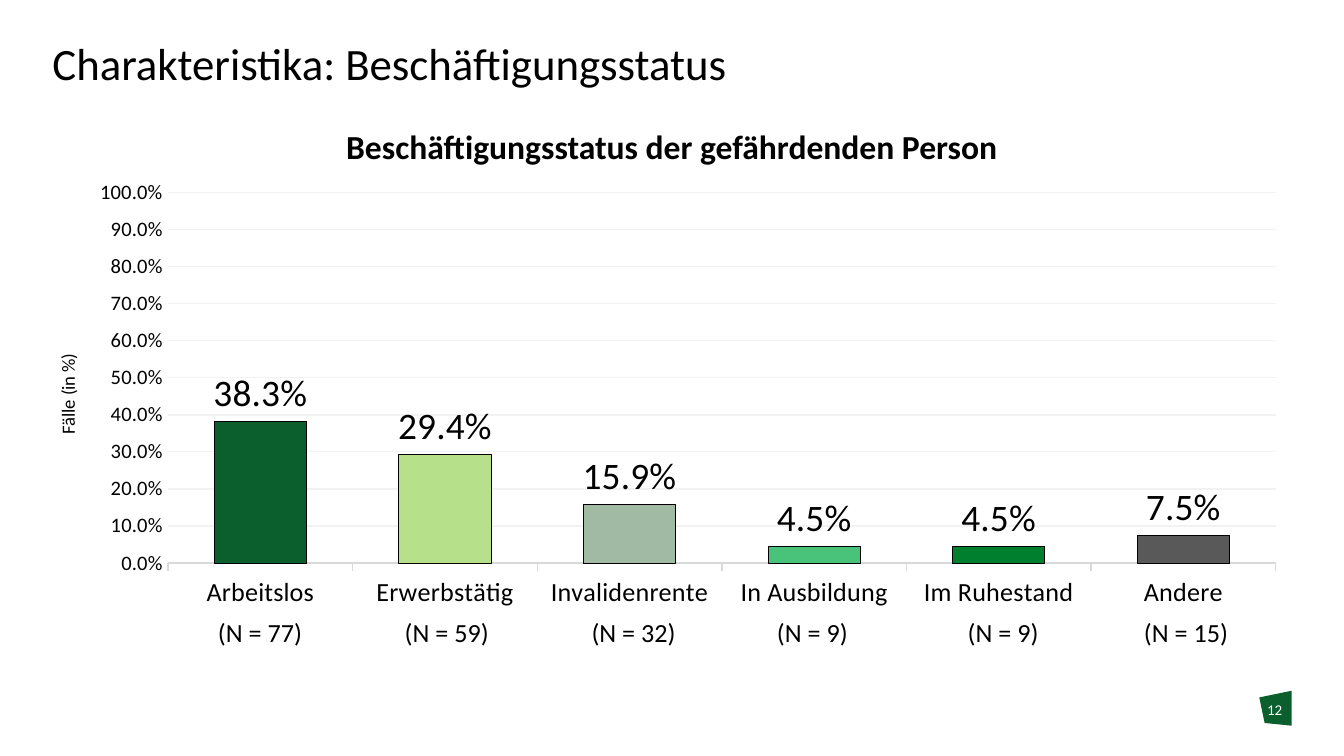
from dataclasses import dataclass

from lxml import etree
from pptx import Presentation
from pptx.chart.data import CategoryChartData
from pptx.dml.color import RGBColor
from pptx.enum.chart import XL_CHART_TYPE, XL_LABEL_POSITION, XL_TICK_MARK
from pptx.enum.shapes import MSO_SHAPE
from pptx.enum.text import MSO_ANCHOR, PP_ALIGN
from pptx.oxml.ns import qn
from pptx.util import Pt

COLUMN = XL_CHART_TYPE.COLUMN_CLUSTERED
OUTSIDE_END = XL_LABEL_POSITION.OUTSIDE_END
TICK_OUT, TICK_NONE = XL_TICK_MARK.OUTSIDE, XL_TICK_MARK.NONE
RECTANGLE = MSO_SHAPE.RECTANGLE
TOP, MIDDLE, BOTTOM = MSO_ANCHOR.TOP, MSO_ANCHOR.MIDDLE, MSO_ANCHOR.BOTTOM
LEFT, CENTER = PP_ALIGN.LEFT, PP_ALIGN.CENTER

PX = 4572
FONT = "Calibri"
PERCENT = "0.0%"
COLORS = {
    "black": "000000",
    "white": "FFFFFF",
    "dark_green": "0A5F2D",
    "lime": "B6E089",
    "sage": "A0BAA3",
    "mint": "4AC37A",
    "green": "00802F",
    "gray": "595959",
    "axis": "D9D9D9",
    "grid": "F2F2F2",
}


@dataclass
class Box:
    x: int
    y: int
    w: int
    h: int

    def emu(self) -> tuple:
        return self.x * PX, self.y * PX, self.w * PX, self.h * PX


@dataclass
class Status:
    name: str
    share: float
    count: int
    color: str
    label_x: int


STATUSES = [
    Status("Arbeitslos", 0.383, 77, "dark_green", 234),
    Status("Erwerbstätig", 0.294, 59, "lime", 512),
    Status("Invalidenrente", 0.159, 32, "sage", 790),
    Status("In Ausbildung", 0.045, 9, "mint", 1056),
    Status("Im Ruhestand", 0.045, 9, "green", 1340),
    Status("Andere", 0.075, 15, "gray", 1612),
]


def rgb(name: str) -> RGBColor:
    return RGBColor.from_string(COLORS[name])


def style_font(font, size: int, color: str = "black", bold: bool = False) -> None:
    font.name = FONT
    font.size = Pt(size)
    font.bold = bold
    font.color.rgb = rgb(color)


def style_line(line, color: str, width: float) -> None:
    line.color.rgb = rgb(color)
    line.width = Pt(width)


def fill_text(sp, text: str, size: int, color: str = "black", bold: bool = False,
              align=CENTER, anchor=TOP, inset: bool = True):
    tf = sp.text_frame
    tf.word_wrap = True
    tf.vertical_anchor = anchor
    if not inset:
        tf.margin_left = tf.margin_right = tf.margin_top = tf.margin_bottom = 0
    p = tf.paragraphs[0]
    p.alignment = align
    r = p.add_run()
    r.text = text
    style_font(r.font, size, color, bold)
    return p


def add_text(s, box: Box, text: str, size: int, **options):
    return fill_text(s.shapes.add_textbox(*box.emu()), text, size, **options)


def add_heading(s, box: Box, text: str) -> None:
    sp = s.shapes.add_shape(RECTANGLE, *box.emu())
    sp.shadow.inherit = False
    sp.fill.solid()
    sp.fill.fore_color.rgb = rgb("white")
    sp.line.fill.background()
    fill_text(sp, text, 18, bold=True, anchor=MIDDLE)


def add_page_mark(s, number: str) -> None:
    builder = s.shapes.build_freeform(1874, 1038, scale=PX)
    builder.add_line_segments([(1922, 1028), (1922, 1080), (1882, 1076)], close=True)
    sp = builder.convert_to_shape()
    sp.shadow.inherit = False
    sp.fill.solid()
    sp.fill.fore_color.rgb = rgb("dark_green")
    sp.line.fill.background()
    add_text(s, Box(1874, 1042, 46, 60), number, 8, color="white", inset=False)


def place_plot(chart, x: float, y: float, w: float, h: float) -> None:
    plot_area = chart.plots[0]._element.getparent()
    for old in plot_area.findall(qn("c:layout")):
        plot_area.remove(old)
    layout = etree.Element(qn("c:layout"))
    manual = etree.SubElement(layout, qn("c:manualLayout"))
    values = {"layoutTarget": "inner", "xMode": "edge", "yMode": "edge",
              "x": x, "y": y, "w": w, "h": h}
    for tag, value in values.items():
        etree.SubElement(manual, qn(f"c:{tag}")).set("val", str(value))
    plot_area.insert(0, layout)


def add_status_chart(s, box: Box, statuses: list[Status]) -> None:
    data = CategoryChartData(number_format=PERCENT)
    data.categories = [status.name for status in statuses]
    data.add_series("Series 1", [status.share for status in statuses])
    chart = s.shapes.add_chart(COLUMN, *box.emu(), data).chart
    chart.has_legend = False
    chart.has_title = False
    style_font(chart.font, 10)
    place_plot(chart, 0.093, 0.059, 0.89, 0.7)

    cat = chart.category_axis
    cat.major_tick_mark = TICK_OUT
    style_font(cat.tick_labels.font, 14)
    style_line(cat.format.line, "axis", 0.75)

    val = chart.value_axis
    val.minimum_scale, val.maximum_scale, val.major_unit = 0, 1, 0.1
    val.major_tick_mark = TICK_NONE
    val.format.line.fill.background()
    style_line(val.major_gridlines.format.line, "grid", 0.75)
    style_font(val.tick_labels.font, 11)
    val.tick_labels.number_format = PERCENT
    val.tick_labels.number_format_is_linked = False
    r = val.axis_title.text_frame.paragraphs[0].add_run()
    r.text = "Fälle (in %)"
    style_font(r.font, 10)

    plot = chart.plots[0]
    plot.gap_width = 100
    plot.vary_by_categories = False
    series = plot.series[0]
    series.format.fill.solid()
    series.format.fill.fore_color.rgb = rgb("dark_green")
    style_line(series.format.line, "black", 0.5)
    for i, status in enumerate(statuses):
        point = series.points[i].format
        point.fill.solid()
        point.fill.fore_color.rgb = rgb(status.color)
        style_line(point.line, "black", 0.5)

    labels = series.data_labels
    labels.show_value = True
    labels.position = OUTSIDE_END
    labels.number_format = PERCENT
    labels.number_format_is_linked = False
    style_font(labels.font, 20)


def main() -> None:
    prs = Presentation()
    prs.slide_width, prs.slide_height = 2000 * PX, 1125 * PX
    s = prs.slides.add_slide(prs.slide_layouts[6])

    add_page_mark(s, "12")
    title = add_text(s, Box(78, 0, 1844, 134), "Charakteristika: Beschäftigungsstatus", 24,
                     align=LEFT, anchor=BOTTOM, inset=False)
    title.line_spacing = 0.9
    add_status_chart(s, Box(78, 240, 1852, 788), STATUSES)
    add_heading(s, Box(78, 196, 1844, 44), "Beschäftigungsstatus der gefährdenden Person")
    for status in STATUSES:
        add_text(s, Box(status.label_x, 908, 306, 68), f"(N = {status.count})", 14)

    prs.save("out.pptx")


if __name__ == "__main__":
    main()
